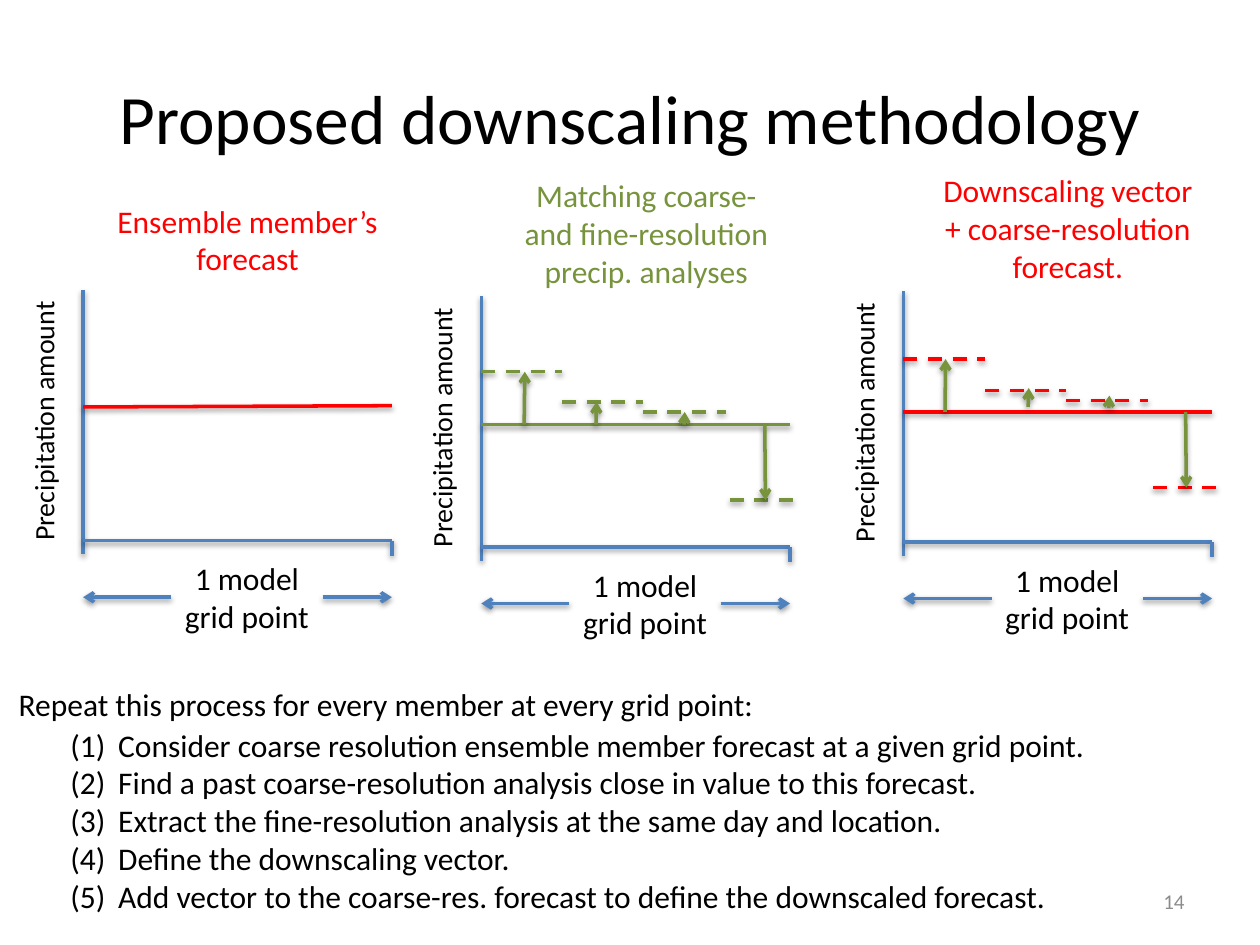
from lxml.etree import SubElement
from pptx import Presentation
from pptx.dml.color import RGBColor
from pptx.enum.dml import MSO_LINE
from pptx.enum.shapes import MSO_CONNECTOR
from pptx.enum.text import MSO_ANCHOR, MSO_AUTO_SIZE, PP_ALIGN
from pptx.oxml.ns import qn
from pptx.util import Inches, Pt

BLACK = RGBColor(0x00, 0x00, 0x00)
RED = RGBColor(0xFF, 0x00, 0x00)
GREEN = RGBColor(0x77, 0x93, 0x3C)
BLUE = RGBColor(0x4F, 0x81, 0xBD)
GRAY = RGBColor(0x8C, 0x8C, 0x8C)

deck = Presentation()
deck.slide_width, deck.slide_height = Inches(10), Inches(7.5)
slide = deck.slides.add_slide(deck.slide_layouts[6])

# Grid: 100 columns by 75 rows
COL = deck.slide_width // 100
ROW = deck.slide_height // 75


def add_text(text, left, top, width, height, size=18, color=BLACK,
             align=PP_ALIGN.LEFT, anchor=MSO_ANCHOR.TOP, rotation=0,
             wrap=False, numbered=False):
    box = slide.shapes.add_textbox(int(left * COL), int(top * ROW),
                                   int(width * COL), int(height * ROW))
    box.rotation = rotation
    frame = box.text_frame
    frame.word_wrap = wrap
    frame.auto_size = MSO_AUTO_SIZE.NONE if wrap else MSO_AUTO_SIZE.SHAPE_TO_FIT_TEXT
    frame.vertical_anchor = anchor
    frame.text = text
    for paragraph in frame.paragraphs:
        paragraph.alignment = align
        if numbered:
            properties = paragraph._p.get_or_add_pPr()
            properties.set("marL", str(Inches(0.38)))
            properties.set("indent", str(-Inches(0.38)))
            SubElement(properties, qn("a:buAutoNum"), type="arabicParenBoth")
        font = paragraph.runs[0].font
        font.name, font.size = "Calibri", Pt(size)
        font.color.rgb = color


def add_line(x1, y1, x2, y2, color=BLUE, dashed=False, arrow=False):
    connector = slide.shapes.add_connector(
        MSO_CONNECTOR.STRAIGHT, int(x1 * COL), int(y1 * ROW),
        int(x2 * COL), int(y2 * ROW))
    connector.line.width = Pt(2)
    connector.line.color.rgb = color
    if dashed:
        connector.line.dash_style = MSO_LINE.DASH
    if arrow:
        SubElement(connector.line._get_or_add_ln(), qn("a:tailEnd"), type="arrow")
    effects = SubElement(connector._element.spPr, qn("a:effectLst"))
    shadow = SubElement(effects, qn("a:outerShdw"), blurRad=str(Pt(3.1)),
                        dist=str(Pt(1.6)), dir="5400000", rotWithShape="0")
    shade = SubElement(shadow, qn("a:srgbClr"), val="000000")
    SubElement(shade, qn("a:alpha"), val="38000")


# Title
add_text("Proposed downscaling methodology", 5, 3, 90, 12.5, size=39.6,
         align=PP_ALIGN.CENTER, anchor=MSO_ANCHOR.MIDDLE, wrap=True)

# Panels: axis corner, heading with its box, colour, coarse value at both ends,
# fine steps (start, end, offset) and vectors (x, start offset, end offset)
panels = [
    (6.6, 23, "Ensemble member’s\nforecast", (8.2, 15.5, 22.9, 7.1),
     RED, (9.3, 9.2), [], []),
    (38.2, 23.5, "Matching coarse-\nand fine-resolution\nprecip. analyses",
     (40.5, 13.5, 21.6, 10.1), GREEN, (10.2, 10.2),
     [(0, 6.4, -4.2), (6.4, 12.8, -1.8), (12.8, 19.4, -1), (19.7, 25.2, 6)],
     [(3.4, 0, -4.2), (9.1, 0, -1.8), (16.1, 0, -1), (22.5, 0, 6)]),
    (71.7, 23.1, "Downscaling vector\n+ coarse-resolution\nforecast.",
     (73.7, 13.1, 22.1, 10.1), RED, (9.6, 9.6),
     [(0, 6.5, -4.2), (6.5, 12.9, -1.7), (12.9, 19.4, -0.9), (19.8, 25.2, 6)],
     [(3.3, 0, -4.2), (9.9, -0.4, -1.9), (16.3, -0.4, -1.3), (22.4, 0, 6)]),
]
SPAN = 24.5  # width of one model grid point

for x, y, heading, heading_box, color, coarse, steps, vectors in panels:
    # Axes and end tick
    add_line(x, y, x, y + 21)
    add_line(x + SPAN, y + 19.9, x, y + 19.9)
    add_line(x + SPAN, y + 21.1, x + SPAN, y + 19.9)

    # Grid point width and axis label
    add_text("1 model\ngrid point", x + 7, y + 20.9, 12, 7.1, align=PP_ALIGN.CENTER)
    add_line(x + 19, y + 24.4, x + SPAN, y + 24.4, arrow=True)
    add_line(x + 7, y + 24.4, x, y + 24.4, arrow=True)
    add_text("Precipitation amount", x - 13.8, y + 8.4, 21.3, 3.7,
             size=16, rotation=270)

    # Heading, coarse value, fine steps and downscaling vectors
    add_text(heading, *heading_box, color=color, align=PP_ALIGN.CENTER)
    add_line(x, y + coarse[0], x + SPAN, y + coarse[1], color)
    level = y + coarse[0]
    for start, end, offset in steps:
        add_line(x + start, level + offset, x + end, level + offset, color, dashed=True)
    for position, start, end in vectors:
        add_line(x + position, level + start, x + position + 0.05, level + end,
                 GREEN, arrow=True)

# Procedure
add_text("Repeat this process for every member at every grid point:",
         0.5, 53.9, 61.2, 4)
procedure = [
    "Consider coarse resolution ensemble member forecast at a given grid point.",
    "Find a past coarse-resolution analysis close in value to this forecast.",
    "Extract the fine-resolution analysis at the same day and location.",
    "Define the downscaling vector.",
    "Add vector to the coarse-res. forecast to define the downscaled forecast.",
]
add_text("\n".join(procedure), 4.6, 57.1, 85.7, 16.2, numbered=True)

# Slide number
add_text("14", 71.7, 69.5, 23.3, 4, size=12, color=GRAY, align=PP_ALIGN.RIGHT,
         anchor=MSO_ANCHOR.MIDDLE, wrap=True)

deck.save("out.pptx")
